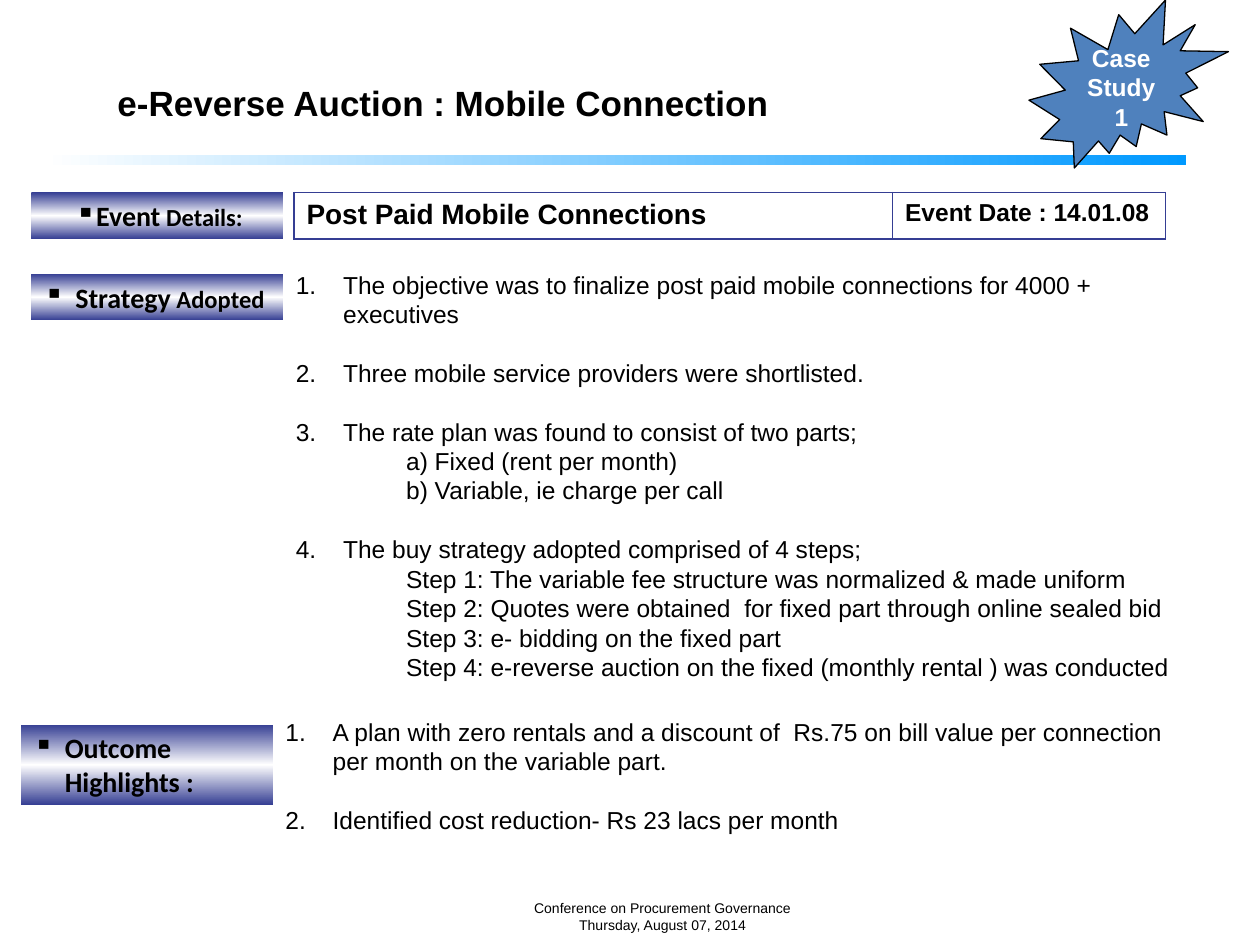
"""Build the case study slide on the e-reverse auction for mobile connections."""
from dataclasses import dataclass

from lxml.etree import SubElement
from pptx import Presentation
from pptx.dml.color import RGBColor
from pptx.enum.shapes import MSO_SHAPE as Preset
from pptx.enum.text import MSO_ANCHOR as Anchor, PP_ALIGN as Align
from pptx.oxml import parse_xml
from pptx.oxml.ns import nsdecls, qn
from pptx.util import Pt


@dataclass(frozen=True)
class Theme:
    ink: str = "000000"
    paper: str = "FFFFFF"
    navy: str = "353E93"
    sky: str = "0099FF"
    seal: str = "4F81BD"
    face: str = "Arial"
    label_face: str = "Calibri"
    title: int = 20
    heading: int = 16
    body: int = 14
    footer: int = 8
    pitch: float = 16.8


theme = Theme()


def style(paragraph, size, bold=False, colour=theme.ink, face=theme.face):
    for run in paragraph.runs:
        run.font.size = Pt(size)
        run.font.bold = bold
        run.font.name = face
        run.font.color.rgb = RGBColor.from_string(colour)


def mark(paragraph, margin, indent, tag, **attributes):
    properties = paragraph._p.get_or_add_pPr()
    properties.set("marL", str(Pt(margin)))
    properties.set("indent", str(Pt(indent)))
    SubElement(properties, qn(tag), attributes)


prs = Presentation()
prs.slide_width, prs.slide_height = Pt(720), Pt(540)
slide = prs.slides.add_slide(prs.slide_layouts[6])
shapes = slide.shapes

sheen = [(0, theme.navy), (50, theme.paper), (100, theme.navy)]
fade = [(0, theme.paper), (100, theme.sky)]
bands = [
    (25.2, 88.6, 652.3, 5.8, Preset.ROUNDED_RECTANGLE, fade, 0, [], None),
    (18, 110, 144, 26.6, Preset.RECTANGLE, sheen, 90,
     [("Event", theme.heading), (" Details:", theme.body)], (0, 18, Align.LEFT)),
    (18, 156.5, 144, 26.6, Preset.RECTANGLE, sheen, 90,
     [("Strategy", theme.heading), (" Adopted", theme.body)], (18, -18, Align.JUSTIFY)),
    (12, 414, 144, 46, Preset.RECTANGLE, sheen, 90,
     [("Outcome Highlights :", theme.heading)], (18, -18, Align.JUSTIFY)),
]
for left, top, width, height, preset, stops, angle, pieces, layout in bands:
    band = shapes.add_shape(preset, Pt(left), Pt(top), Pt(width), Pt(height))
    band.shadow.inherit = False
    band.line.fill.background()
    band.fill.gradient()
    band.fill.gradient_angle = angle
    stop_list = band._element.spPr.find(qn("a:gradFill")).find(qn("a:gsLst"))
    stop_list.clear()
    for position, colour in stops:
        stop = SubElement(stop_list, qn("a:gs"), pos=str(position * 1000))
        SubElement(stop, qn("a:srgbClr"), val=colour)
    if layout:
        margin, indent, alignment = layout
        band.text_frame.vertical_anchor = Anchor.TOP
        label = band.text_frame.paragraphs[0]
        label.alignment = alignment
        mark(label, margin, indent, "a:buChar", char="▪")
        for words, size in pieces:
            label.add_run().text = words
        style(label, theme.heading, True, face=theme.label_face)
        for run, (words, size) in zip(label.runs, pieces):
            run.font.size = Pt(size)

event = shapes.add_table(1, 2, Pt(168), Pt(110), Pt(498), Pt(26.6)).table
event.first_row = event.horz_banding = False
event_cells = [
    ("Post Paid Mobile Connections", theme.heading, 342),
    ("Event Date : 14.01.08", theme.body, 156),
]
for index, (words, size, width) in enumerate(event_cells):
    event.columns[index].width = Pt(width)
    cell = event.cell(0, index)
    cell.text_frame.text = words
    style(cell.text_frame.paragraphs[0], size, True)
    cell.fill.background()
    for order, side in enumerate(("lnL", "lnR", "lnT", "lnB")):
        border = parse_xml(
            f'<a:{side} {nsdecls("a")} w="{Pt(1)}"><a:solidFill>'
            f'<a:srgbClr val="{theme.navy}"/></a:solidFill></a:{side}>')
        cell._tc.get_or_add_tcPr().insert(order, border)

strategy = [
    ("The objective was to finalize post paid mobile connections for 4000 + executives", []),
    ("Three mobile service providers were shortlisted.", []),
    ("The rate plan was found to consist of two parts;",
     ["a) Fixed (rent per month)", "b) Variable, ie charge per call"]),
    ("The buy strategy adopted comprised of 4 steps;",
     ["Step 1: The variable fee structure was normalized & made uniform",
      "Step 2: Quotes were obtained  for fixed part through online sealed bid",
      "Step 3: e- bidding on the fixed part",
      "Step 4: e-reverse auction on the fixed (monthly rental ) was conducted"]),
]
outcome = [
    ("A plan with zero rentals and a discount of  Rs.75 on bill value per connection "
     "per month on the variable part.", []),
    ("Identified cost reduction- Rs 23 lacs per month", []),
]
for points, left, top, width, height in [
    (strategy, 162, 150.5, 534, 244.8),
    (outcome, 156, 406, 528, 90.7),
]:
    frame = shapes.add_textbox(Pt(left), Pt(top), Pt(width), Pt(height)).text_frame
    frame.word_wrap = True
    for number, (point, details) in enumerate(points, 1):
        item = frame.paragraphs[0] if number == 1 else frame.add_paragraph()
        item.text = point
        mark(item, 27, -27, "a:buAutoNum", type="arabicPeriod", startAt=str(number))
        if number > 1:
            item.space_before = Pt(theme.pitch)
        for detail in details:
            step = frame.add_paragraph()
            step.text = detail
            step.level = 1
            mark(step, 63, 0, "a:buNone")
    for paragraph in frame.paragraphs:
        paragraph.line_spacing = Pt(theme.pitch)
        style(paragraph, theme.body)

seal = shapes.add_shape(Preset.EXPLOSION2, Pt(588), Pt(0), Pt(114), Pt(96))
seal.shadow.inherit = False
seal.fill.solid()
seal.fill.fore_color.rgb = RGBColor.from_string(theme.seal)
seal.line.color.rgb = RGBColor.from_string(theme.ink)
seal.line.width = Pt(0.75)
seal.text_frame.word_wrap = False
seal.text_frame.vertical_anchor = Anchor.MIDDLE
seal.text_frame.text = "Case\nStudy\n1"
for paragraph in seal.text_frame.paragraphs:
    paragraph.alignment = Align.CENTER
    paragraph.line_spacing = Pt(theme.pitch)
    style(paragraph, theme.body, True, theme.paper)

for words, left, top, width, height, size, bold, alignment in [
    ("e-Reverse Auction : Mobile Connection",
     60, 43.2, 528, 31.7, theme.title, True, Align.LEFT),
    ("Conference on Procurement Governance\nThursday, August 07, 2014",
     275, 510.5, 207.4, 31.7, theme.footer, False, Align.CENTER),
]:
    frame = shapes.add_textbox(Pt(left), Pt(top), Pt(width), Pt(height)).text_frame
    frame.word_wrap = True
    frame.text = words
    for paragraph in frame.paragraphs:
        paragraph.alignment = alignment
        style(paragraph, size, bold)

prs.save("out.pptx")
